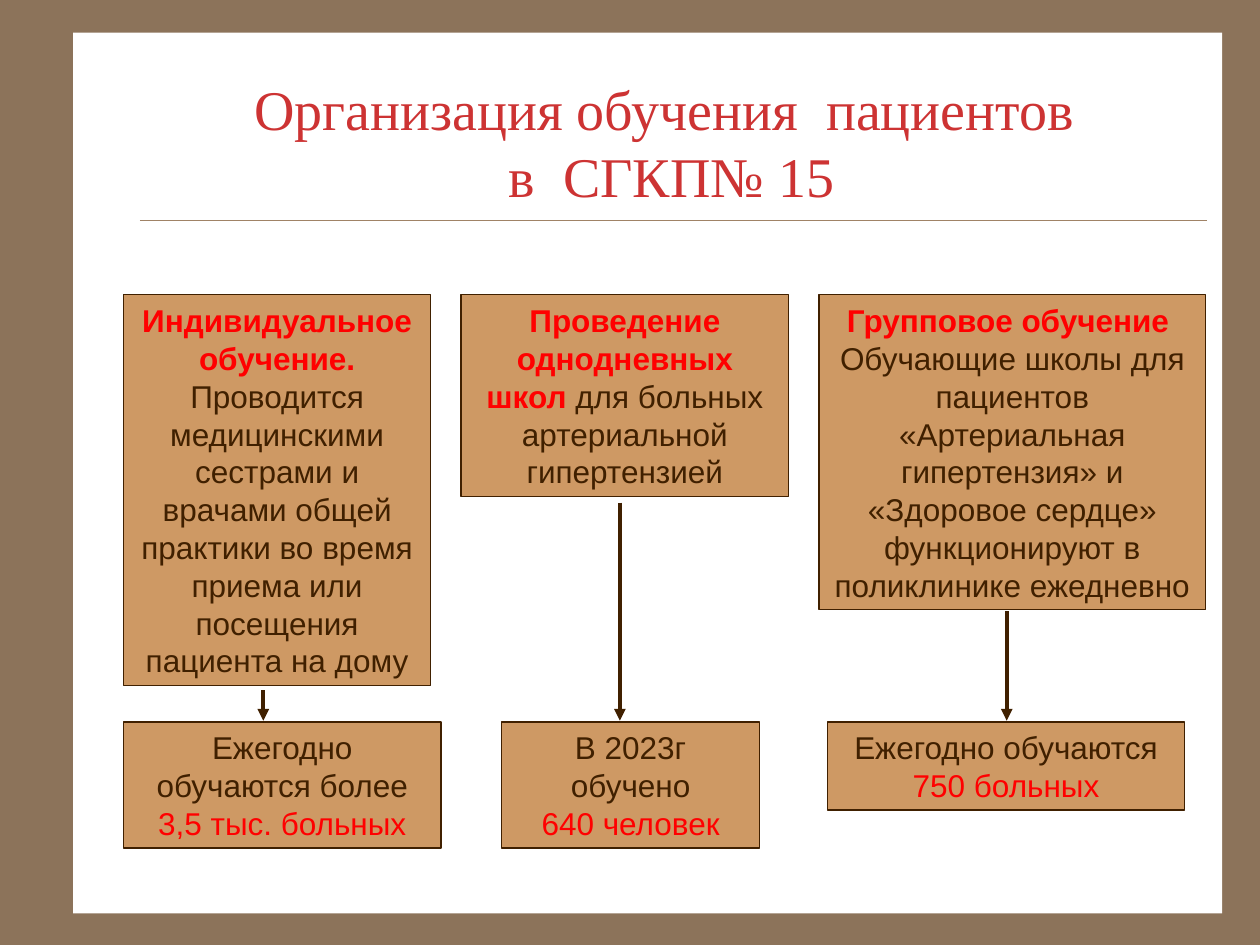
import pptx
import pptx.dml.color
import pptx.enum.shapes
import pptx.enum.text
import pptx.oxml
import pptx.oxml.ns
import pptx.util
from dataclasses import dataclass

Inches = pptx.util.Inches
MSO_SHAPE = pptx.enum.shapes.MSO_SHAPE
CENTER = pptx.enum.text.PP_ALIGN.CENTER
MIDDLE = pptx.enum.text.MSO_ANCHOR.MIDDLE
AUTO_SIZE = pptx.enum.text.MSO_AUTO_SIZE


@dataclass(frozen=True)
class Theme:
    frame: str = "8C735A"
    paper: str = "FFFFFF"
    rule: str = "A08366"
    title: str = "CD3333"
    card: str = "CE9964"
    ink: str = "402000"
    accent: str = "FF0000"
    title_font: str = "Times New Roman"
    body_font: str = "Arial"
    title_size: int = 32
    body_size: int = 18


THEME = Theme()
TITLE = "Организация обучения  пациентов \vв  СГКП№ 15"

# Each paragraph is a list of (text, style) spans.
COLUMNS = [
    {
        "method": [
            [("Индивидуальное обучение.", "heading")],
            [("Проводится медицинскими сестрами и врачами общей практики "
              "во время приема или посещения пациента на дому", "plain")],
        ],
        "method_at": (0.98, 2.44, 3.1),
        "result": [[("Ежегодно обучаются более ", "plain"),
                    ("3,5 тыс. больных", "figure")]],
        "result_at": (0.98, 2.52, 1),
        "arrow": (2.09, 5.48),
    },
    {
        "method": [[("Проведение однодневных школ ", "heading"),
                    ("для больных артериальной гипертензией", "plain")]],
        "method_at": (3.66, 2.6, 1.6),
        "result": [[("В 2023г обучено", "plain")],
                   [("640 человек", "figure")]],
        "result_at": (3.98, 2.05, 1),
        "arrow": (4.92, 3.99),
    },
    {
        "method": [
            [("Групповое обучение ", "heading")],
            [("Обучающие школы для пациентов «Артериальная гипертензия» и "
              "«Здоровое сердце» функционируют в поликлинике ежедневно", "plain")],
        ],
        "method_at": (6.5, 3.07, 2.5),
        "result": [[("Ежегодно обучаются ", "plain"),
                    ("750 больных", "figure")]],
        "result_at": (6.57, 2.83, 0.7),
        "arrow": (7.99, 4.85),
    },
]
METHOD_TOP, RESULT_TOP = 2.34, 5.73
STYLES = {
    "heading": (THEME.accent, True),
    "plain": (THEME.ink, False),
    "figure": (THEME.accent, False),
}


def rgb(value):
    return pptx.dml.color.RGBColor.from_string(value)


def add_box(page, left, top, width, height, fill):
    box = page.shapes.add_shape(MSO_SHAPE.RECTANGLE, Inches(left), Inches(top),
                                Inches(width), Inches(height))
    box.shadow.inherit = False
    box.fill.solid()
    box.fill.fore_color.rgb = rgb(fill)
    box.line.fill.background()
    return box


def add_line(page, start, end, color, weight, arrow=False):
    line = page.shapes.add_connector(pptx.enum.shapes.MSO_CONNECTOR.STRAIGHT,
                                     *map(Inches, start + end))
    line.line.color.rgb = rgb(color)
    line.line.width = pptx.util.Pt(weight)
    if arrow:
        head = pptx.oxml.parse_xml(
            f'<a:tailEnd {pptx.oxml.ns.nsdecls("a")} type="triangle"/>')
        line.line._get_or_add_ln().append(head)
    line._element.spPr.append(
        pptx.oxml.parse_xml(f'<a:effectLst {pptx.oxml.ns.nsdecls("a")}/>'))


def add_card(page, place, top, paragraphs):
    left, width, height = place
    card = add_box(page, left, top, width, height, THEME.card)
    card.line.color.rgb = rgb(THEME.ink)
    card.line.width = pptx.util.Pt(0.75)
    frame = card.text_frame
    frame.word_wrap = True
    frame.vertical_anchor = MIDDLE
    frame.auto_size = AUTO_SIZE.SHAPE_TO_FIT_TEXT
    for index, spans in enumerate(paragraphs):
        para = frame.add_paragraph() if index else frame.paragraphs[0]
        para.alignment = CENTER
        para.font.name = THEME.body_font
        para.font.size = pptx.util.Pt(THEME.body_size)
        for text, style in spans:
            span = para.add_run()
            span.text = text
            color, span.font.bold = STYLES[style]
            span.font.color.rgb = rgb(color)


def format_title(title):
    title.left, title.top = Inches(1.08), Inches(0.5)
    title.width, title.height = Inches(8.5), Inches(1.25)
    frame = title.text_frame
    frame.text = TITLE
    frame.word_wrap = True
    frame.auto_size = AUTO_SIZE.NONE
    frame.vertical_anchor = MIDDLE
    para = frame.paragraphs[0]
    para.alignment = CENTER
    para.font.name = THEME.title_font
    para.font.size = pptx.util.Pt(THEME.title_size)
    para.font.color.rgb = rgb(THEME.title)


def main():
    deck = pptx.Presentation()
    deck.slide_width, deck.slide_height = Inches(10), Inches(7.5)
    page = deck.slides.add_slide(deck.slide_layouts.get_by_name("Title Only"))
    page.background.fill.solid()
    page.background.fill.fore_color.rgb = rgb(THEME.frame)

    panel = add_box(page, 0.58, 0.26, 9.12, 6.99, THEME.paper)
    title = page.shapes.title
    format_title(title)
    panel._element.addnext(title._element)  # the title lies above the panel
    add_line(page, (1.11, 1.75), (9.58, 1.75), THEME.rule, 0.25)

    for column in COLUMNS:
        add_card(page, column["method_at"], METHOD_TOP, column["method"])
        add_card(page, column["result_at"], RESULT_TOP, column["result"])
        x, top = column["arrow"]
        add_line(page, (x, top), (x, RESULT_TOP - 0.01), THEME.ink, 2.25, arrow=True)

    deck.save("out.pptx")


if __name__ == "__main__":
    main()
